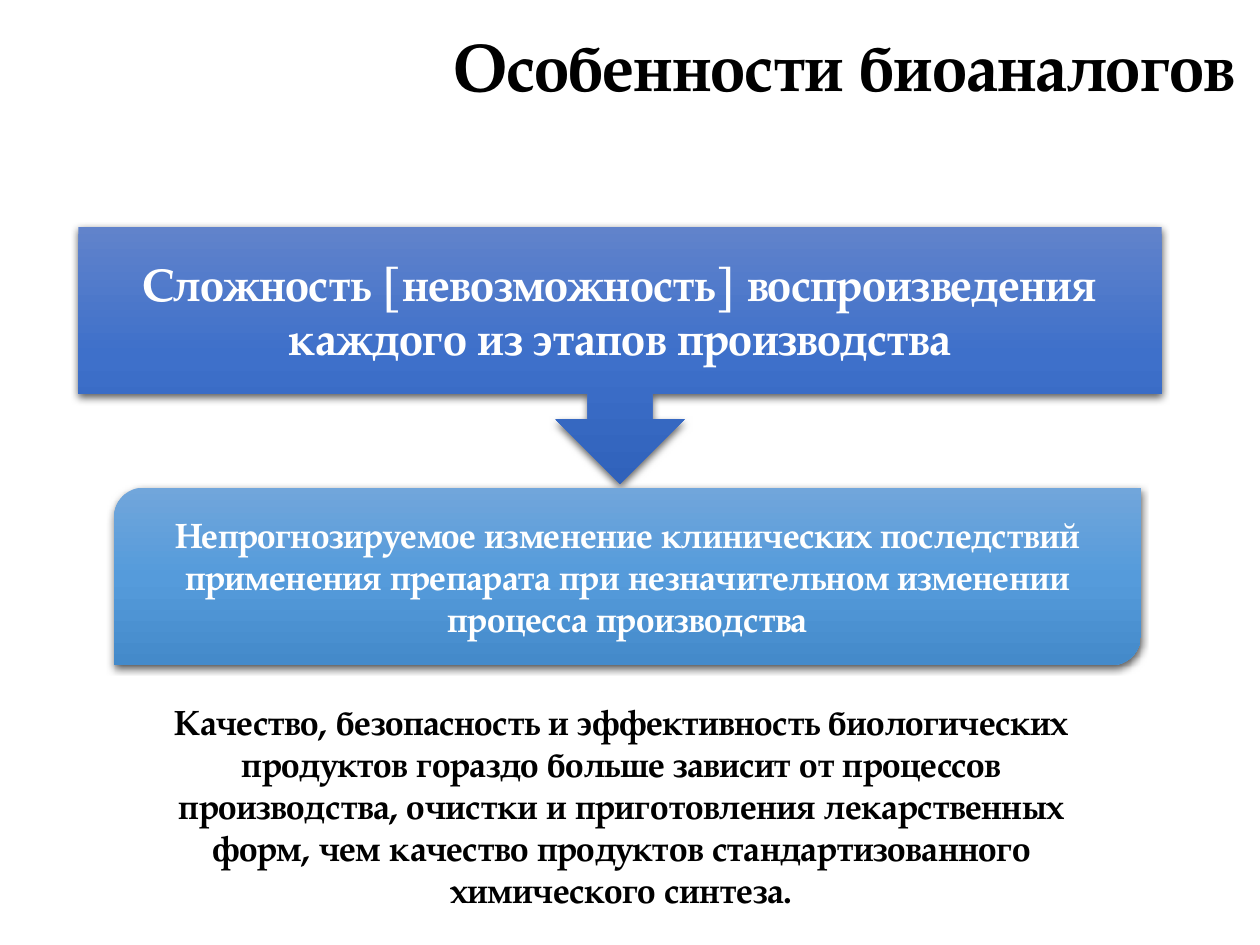
import pptx
import pptx.util
import pptx.oxml
import pptx.oxml.ns
import pptx.dml.color
import pptx.enum.shapes
import pptx.enum.text
from pptx.util import Cm

FONT = "TeX Gyre Pagella"
COLORS = {"dark": "000000", "light": "FFFFFF"}
FADES = {
    "cause": ("6183CB", "3E70CA", "3062BB"),
    "effect": ("71A6DB", "559BDB", "448ACA"),
}
ALIGN = pptx.enum.text.PP_ALIGN
ANCHOR = pptx.enum.text.MSO_ANCHOR
KIND = pptx.enum.shapes.MSO_SHAPE
NS = pptx.oxml.ns.nsdecls("a")


class Deck:
    def __init__(self):
        self.prs = pptx.Presentation()
        self.prs.slide_width, self.prs.slide_height = Cm(25.4), Cm(19.05)
        self.slide = self.prs.slides.add_slide(self.prs.slide_layouts[5])

    def label(self, shape, text, size, color, align=ALIGN.CENTER, anchor=ANCHOR.TOP):
        frame = shape.text_frame
        frame.text = text
        frame.word_wrap = True
        frame.vertical_anchor = anchor
        para = frame.paragraphs[0]
        para.alignment = align
        font = para.runs[0].font
        font.name, font.size, font.bold = FONT, pptx.util.Pt(size), True
        font.color.rgb = pptx.dml.color.RGBColor.from_string(COLORS[color])
        return frame

    def title(self, text, box, size):
        shape = self.slide.shapes.title
        shape.left, shape.top, shape.width, shape.height = box
        frame = self.label(shape, text, size, "dark", ALIGN.RIGHT)
        frame.margin_left = frame.margin_top = frame.margin_right = Cm(0.51)
        frame.margin_bottom = Cm(0.13)
        frame.auto_size = pptx.enum.text.MSO_AUTO_SIZE.SHAPE_TO_FIT_TEXT

    def note(self, text, box, size):
        frame = self.label(self.slide.shapes.add_textbox(*box), text, size, "dark")
        frame.auto_size = pptx.enum.text.MSO_AUTO_SIZE.SHAPE_TO_FIT_TEXT

    def block(self, kind, text, box, size, fade):
        shape = self.slide.shapes.add_shape(kind, *box)
        shape.line.fill.background()
        self.shade(shape, FADES[fade])
        self.shadow(shape)
        self.label(shape, text, size, "light", anchor=ANCHOR.MIDDLE)

    def shade(self, shape, fade):
        """Fill from top to bottom with evenly spaced colour stops."""
        shape.fill.gradient()
        shape.fill.gradient_angle = 270
        stops = shape.element.spPr.find(".//" + pptx.oxml.ns.qn("a:gsLst"))
        stops.clear()
        for i, color in enumerate(fade):
            stops.append(pptx.oxml.parse_xml(
                f'<a:gs {NS} pos="{i * 50000}"><a:srgbClr val="{color}"/></a:gs>'))

    def shadow(self, shape):
        shape.shadow.inherit = False
        effects = shape.element.spPr.find(pptx.oxml.ns.qn("a:effectLst"))
        effects.append(pptx.oxml.parse_xml(
            f'<a:outerShdw {NS} blurRad="57150" dist="19050" dir="5400000" '
            f'algn="ctr" rotWithShape="0"><a:srgbClr val="{COLORS["dark"]}">'
            '<a:alpha val="63000"/></a:srgbClr></a:outerShdw>'))


def main():
    deck = Deck()
    deck.title("Особенности биоаналогов", (Cm(0), Cm(0), Cm(25.4), Cm(2.26)), 38)
    deck.block(
        KIND.DOWN_ARROW_CALLOUT,
        "Сложность [невозможность] воспроизведения каждого из этапов производства",
        (Cm(1.58), Cm(4.57), Cm(21.84), Cm(5.18)), 26, "cause")
    deck.block(
        KIND.ROUND_2_DIAG_RECTANGLE,
        "Непрогнозируемое изменение клинических последствий применения "
        "препарата при незначительном изменении процесса производства",
        (Cm(2.3), Cm(9.83), Cm(20.7), Cm(3.58)), 20, "effect")
    deck.note(
        "Качество, безопасность и эффективность биологических продуктов "
        "гораздо больше зависит от процессов производства, очистки и "
        "приготовления лекарственных форм, чем качество продуктов "
        "стандартизованного химического синтеза.",
        (Cm(2.46), Cm(14), Cm(20.14), Cm(4.52)), 20)
    deck.prs.save("out.pptx")


if __name__ == "__main__":
    main()
